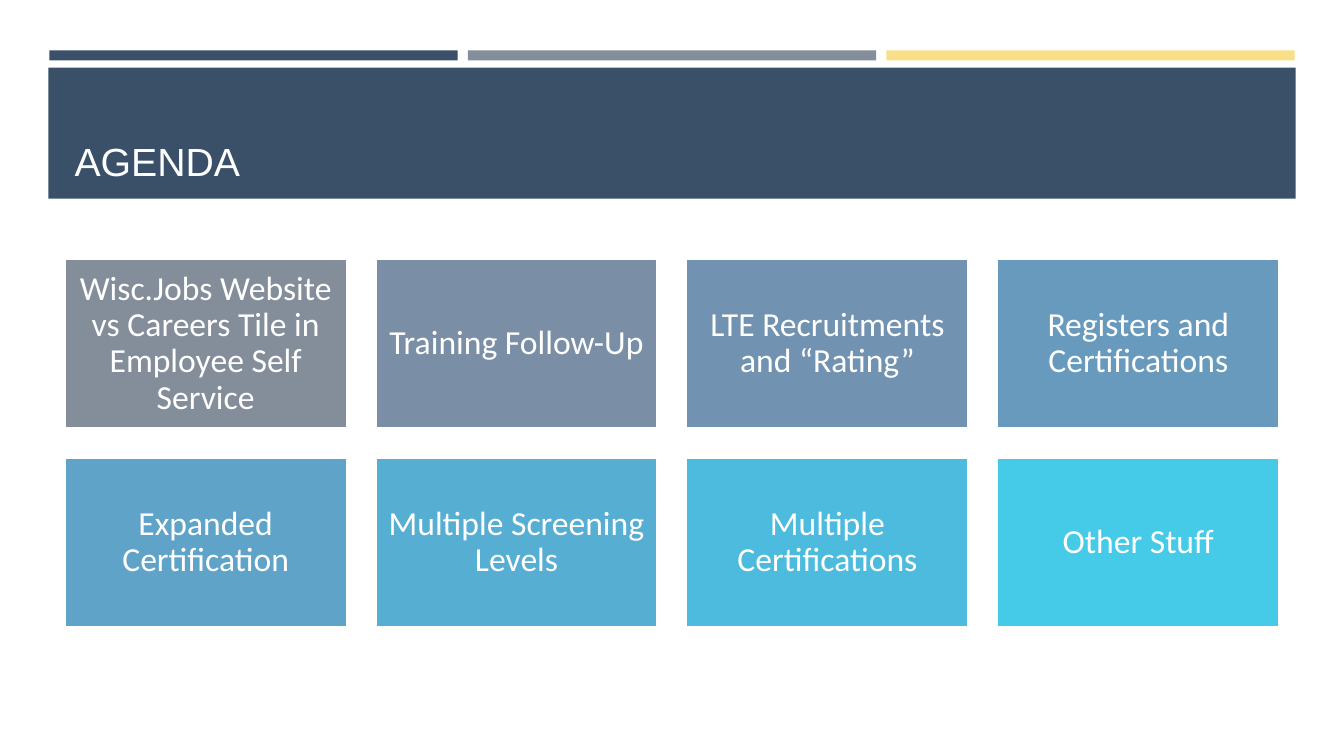
import pptx
import pptx.dml.color
import pptx.enum.shapes
import pptx.enum.text
import pptx.util

WIDTH, HEIGHT = 13.33, 7.5
NAVY, GREY, YELLOW, WHITE = "3A5068", "848D9A", "F8DF88", "FFFFFF"
ALIGN = pptx.enum.text.PP_ALIGN
ANCHOR = pptx.enum.text.MSO_ANCHOR

# Agenda topics with their tile colours, in reading order
TOPICS = [
    ("Wisc.Jobs Website vs Careers Tile in Employee Self Service", GREY),
    ("Training Follow-Up", "7A8FA6"),
    ("LTE Recruitments and “Rating”", "7193B1"),
    ("Registers and Certifications", "689ABD"),
    ("Expanded Certification", "5FA3C8"),
    ("Multiple Screening Levels", "56AED3"),
    ("Multiple Certifications", "4DBBDD"),
    ("Other Stuff", "45CBE8"),
]


def color(hex_value):
    return pptx.dml.color.RGBColor.from_string(hex_value)


def apply_format(target, values):
    for key, value in values.items():
        setattr(target, key, value)


class AgendaSlide:
    """Holds the style, the tile grid and the current slide."""

    columns = 4
    left, top = 0.64, 2.57
    tile_width, tile_height = 2.8, 1.68
    # Four tiles span the title's width; rows sit 1.97 apart
    span = 12.05
    column_pitch = (span - tile_width) / (columns - 1)
    row_pitch = 1.97
    title_style = {"name": "Arial", "size": pptx.util.Pt(28), "bold": False}
    tile_style = {"name": "Calibri", "size": pptx.util.Pt(24), "bold": False}
    tile_paragraph = {"alignment": ALIGN.CENTER, "line_spacing": 0.9}
    tile_frame = {
        "word_wrap": True,
        "vertical_anchor": ANCHOR.MIDDLE,
        "margin_left": pptx.util.Inches(0.1),
        "margin_top": pptx.util.Inches(0.1),
        "margin_right": pptx.util.Inches(0.1),
        "margin_bottom": pptx.util.Inches(0.1),
    }

    def __init__(self, deck):
        self.slide = deck.slides.add_slide(deck.slide_layouts[5])

    def block(self, left, top, width, height, fill):
        box = self.slide.shapes.add_shape(
            pptx.enum.shapes.MSO_SHAPE.RECTANGLE,
            *map(pptx.util.Inches, (left, top, width, height)))
        box.shadow.inherit = False
        box.fill.solid()
        box.fill.fore_color.rgb = color(fill)
        box.line.fill.background()
        return box

    def set_text(self, frame, text, frame_values, paragraph_values, font_values, ink):
        apply_format(frame, frame_values)
        frame.text = text
        paragraph = frame.paragraphs[0]
        apply_format(paragraph, paragraph_values)
        apply_format(paragraph.font, font_values)
        paragraph.font.color.rgb = color(ink)

    def title(self, text):
        heading = self.slide.shapes.title
        apply_format(heading, {"left": pptx.util.Inches(self.left),
                               "top": pptx.util.Inches(0.77),
                               "width": pptx.util.Inches(12.06),
                               "height": pptx.util.Inches(1.11)})
        self.set_text(heading.text_frame, text,
                      {"word_wrap": True, "vertical_anchor": ANCHOR.BOTTOM,
                       "auto_size": pptx.enum.text.MSO_AUTO_SIZE.NONE},
                      {"alignment": ALIGN.LEFT}, self.title_style, "FFFEFF")
        # Bring the title in front of the banner
        heading.element.getparent().append(heading.element)

    def tile(self, index, text, fill):
        row, column = divmod(index, self.columns)
        box = self.block(self.left + column * self.column_pitch,
                         self.top + row * self.row_pitch,
                         self.tile_width, self.tile_height, fill)
        box.line.color.rgb = color(WHITE)
        box.line.width = pptx.util.Pt(1.75)
        self.set_text(box.text_frame, text, self.tile_frame,
                      self.tile_paragraph, self.tile_style, WHITE)


def main():
    deck = pptx.Presentation()
    deck.slide_width = pptx.util.Inches(WIDTH)
    deck.slide_height = pptx.util.Inches(HEIGHT)
    agenda = AgendaSlide(deck)

    # Accent strips and title banner
    for position, accent in enumerate((NAVY, GREY, YELLOW)):
        agenda.block(0.49 + position * 4.15, 0.5, 4.05, 0.1, accent)
    agenda.block(0.48, 0.67, 12.37, 1.3, NAVY)
    agenda.title("AGENDA")

    # Topic tiles
    for index, (topic, fill) in enumerate(TOPICS):
        agenda.tile(index, topic, fill)

    deck.save("out.pptx")


if __name__ == "__main__":
    main()
